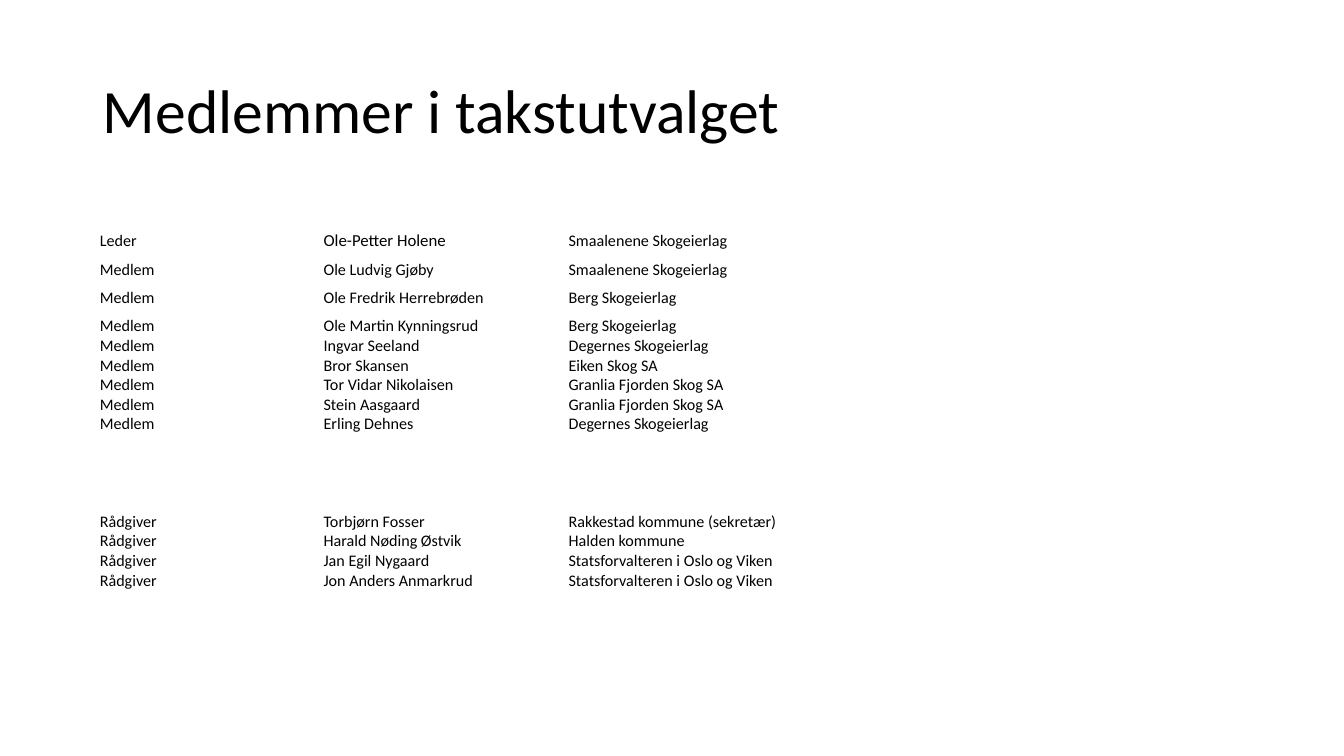
from lxml import etree
from pptx import Presentation
from pptx.dml.color import RGBColor
from pptx.enum.text import MSO_ANCHOR, MSO_AUTO_SIZE, PP_ALIGN
from pptx.oxml.ns import qn
from pptx.util import Inches, Pt

MIDDLE, TOP = MSO_ANCHOR.MIDDLE, MSO_ANCHOR.TOP
LEFT = PP_ALIGN.LEFT
NO_FIT = MSO_AUTO_SIZE.NONE

COLORS = {"text": "000000", "line": "FFFFFF"}
COLS = [2.22, 2.43, 3.89]

# Each row: height, then the people in it as role, name, group
ROWS = [
    (0.29, [("Leder", "Ole-Petter Holene", "Smaalenene Skogeierlag")]),
    (0.28, [("Medlem", "Ole Ludvig Gjøby", "Smaalenene Skogeierlag")]),
    (0.28, [("Medlem", "Ole Fredrik Herrebrøden", "Berg Skogeierlag")]),
    (1.94, [
        ("Medlem", "Ole Martin Kynningsrud", "Berg Skogeierlag"),
        ("Medlem", "Ingvar Seeland", "Degernes Skogeierlag"),
        ("Medlem", "Bror Skansen", "Eiken Skog SA"),
        ("Medlem", "Tor Vidar Nikolaisen", "Granlia Fjorden Skog SA"),
        ("Medlem", "Stein Aasgaard", "Granlia Fjorden Skog SA"),
        ("Medlem", "Erling Dehnes", "Degernes Skogeierlag"),
    ]),
    (1.11, [
        ("Rådgiver", "Torbjørn Fosser", "Rakkestad kommune (sekretær)"),
        ("Rådgiver", "Harald Nøding Østvik", "Halden kommune"),
        ("Rådgiver", "Jan Egil Nygaard", "Statsforvalteren i Oslo og Viken"),
        ("Rådgiver", "Jon Anders Anmarkrud", "Statsforvalteren i Oslo og Viken"),
    ]),
]


def apply(item, values):
    for name, value in values.items():
        setattr(item, name, value)


class Deck:
    def __init__(self, width, height, font):
        self.prs = Presentation()
        apply(self.prs, {"slide_width": Inches(width),
                         "slide_height": Inches(height)})
        self.font = font
        self.slide = self.prs.slides.add_slide(self.prs.slide_layouts[5])

    def text(self, frame, lines, size, spacing=1.0):
        frame.text = "\n".join(lines)
        for para in frame.paragraphs:
            apply(para, {"alignment": LEFT, "line_spacing": spacing})
            for run in para.runs:
                apply(run.font, {"name": self.font, "size": Pt(size), "bold": False})
                run.font.color.rgb = RGBColor.from_string(COLORS["text"])

    def title(self, words, left, top, width, height):
        shape = self.slide.shapes.title
        apply(shape, {"left": Inches(left), "top": Inches(top),
                      "width": Inches(width), "height": Inches(height)})
        apply(shape.text_frame, {"vertical_anchor": MIDDLE, "word_wrap": True,
                                 "auto_size": NO_FIT})
        self.text(shape.text_frame, [words], 44, 0.9)

    def border(self, cell):
        props = cell._tc.get_or_add_tcPr()
        for side in ("lnL", "lnR", "lnT", "lnB"):
            line = etree.SubElement(props, qn("a:" + side), w=str(Pt(1)))
            fill = etree.SubElement(line, qn("a:solidFill"))
            etree.SubElement(fill, qn("a:srgbClr"), val=COLORS["line"])

    def table(self, rows, cols, left, top):
        high = sum(height for height, _ in rows)
        frame = self.slide.shapes.add_table(
            len(rows), len(cols), Inches(left), Inches(top),
            Inches(sum(cols)), Inches(high))
        grid = frame.table
        apply(grid, {"first_row": False, "horz_banding": False})
        for col, width in zip(grid.columns, cols):
            col.width = Inches(width)
        for r, (height, people) in enumerate(rows):
            grid.rows[r].height = Inches(height)
            for c, lines in enumerate(zip(*people)):
                cell = grid.cell(r, c)
                apply(cell, {"margin_left": Inches(0.07), "margin_right": Inches(0.07),
                             "margin_top": 0, "margin_bottom": 0,
                             "vertical_anchor": TOP})
                self.border(cell)
                cell.fill.background()
                # The leader's name is slightly larger
                self.text(cell.text_frame, lines, 12 if (r, c) == (0, 1) else 11.5)


def main():
    deck = Deck(13.33, 7.5, "Calibri")
    # Heading
    deck.title("Medlemmer i takstutvalget", 0.92, 0.4, 11.5, 1.45)
    # Members and advisers
    deck.table(ROWS, COLS, 0.92, 2.29)
    deck.prs.save("out.pptx")


if __name__ == "__main__":
    main()
